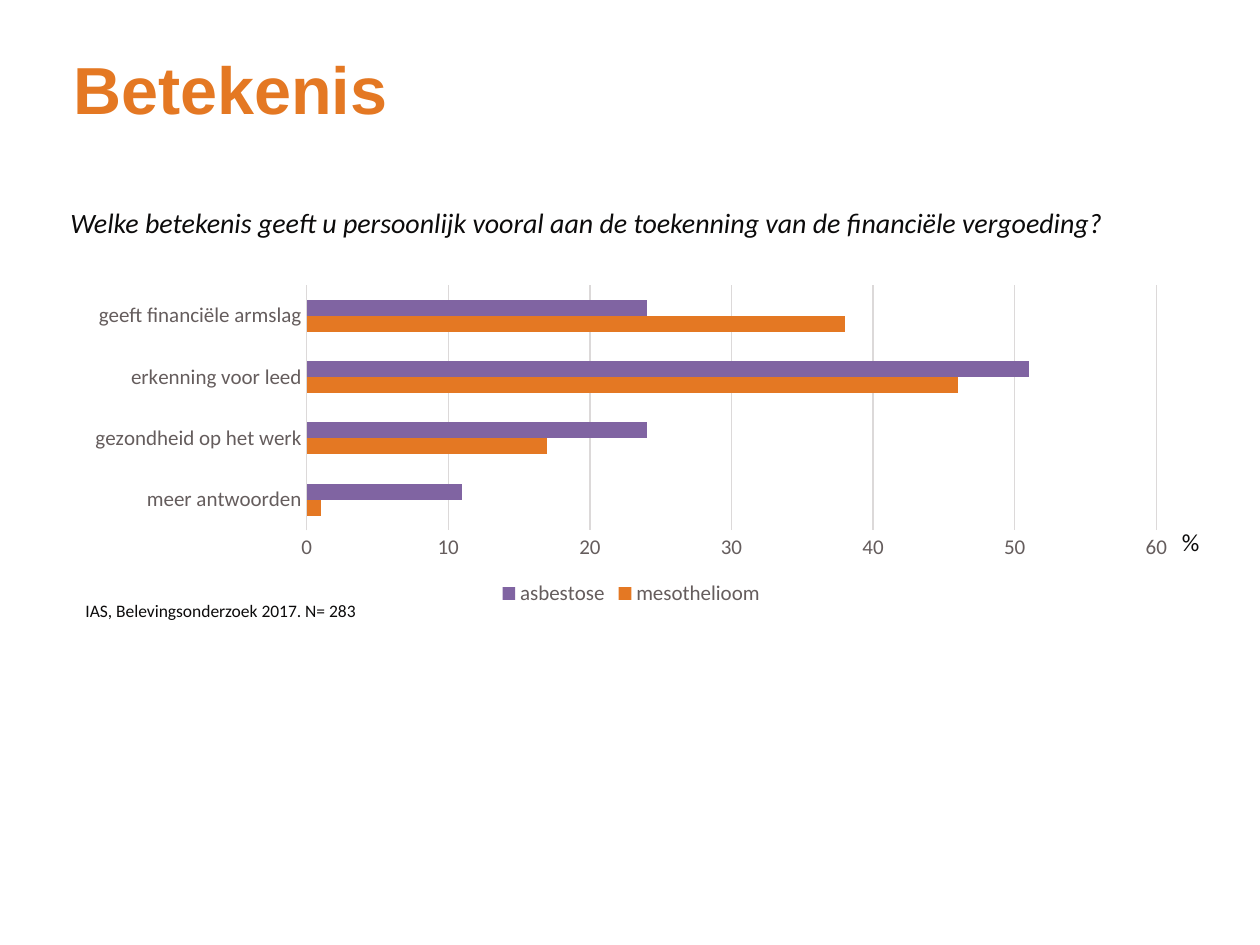
from dataclasses import dataclass

from pptx import Presentation
from pptx.chart.data import CategoryChartData as ChartData
from pptx.dml.color import RGBColor
from pptx.enum.chart import XL_CHART_TYPE as Kind, XL_LEGEND_POSITION as Spot, XL_TICK_MARK as Tick
from pptx.slide import Slide
from pptx.util import Inches, Pt

ORANGE = RGBColor(0xE4, 0x78, 0x23)
PURPLE = RGBColor(0x80, 0x64, 0xA2)
INK = RGBColor(0x0C, 0x0B, 0x0B)
GREY = RGBColor(0x65, 0x5D, 0x5D)
RULE = RGBColor(0xDC, 0xD9, 0xD9)
WIDE, HIGH = 10, 7.5
LEFT, SPAN = 0.58, 8.86


@dataclass(frozen=True)
class Box:
    left: float
    top: float
    width: float
    height: float

    def place(self) -> tuple:
        return tuple(Inches(n) for n in (self.left, self.top, self.width, self.height))


@dataclass(frozen=True)
class Group:
    name: str
    shares: tuple
    color: RGBColor


ANSWERS = ("meer antwoorden", "gezondheid op het werk", "erkenning voor leed", "geeft financiële armslag")
GROUPS = (
    Group("mesothelioom", (1, 17, 46, 38), ORANGE),
    Group("asbestose", (11, 24, 51, 24), PURPLE),
)


def style(font, size: float, color: RGBColor, face: str = "Calibri") -> None:
    font.name = face
    font.size = Pt(size)
    font.color.rgb = color


def write(slide: Slide, text: str, box: Box, *, size: float, face: str = "Calibri",
          color: RGBColor = INK, bold: bool = False, italic: bool = False,
          wrap: bool = False, side: float = 0.1, edge: float = 0.05) -> None:
    frame = slide.shapes.add_textbox(*box.place()).text_frame
    frame.word_wrap = wrap
    frame.margin_left = frame.margin_right = Inches(side)
    frame.margin_top = frame.margin_bottom = Inches(edge)
    run = frame.paragraphs[0].add_run()
    run.text = text
    style(run.font, size, color, face)
    run.font.bold = bold
    run.font.italic = italic


def rule(line) -> None:
    line.color.rgb = RULE
    line.width = Pt(0.75)


def plot(slide: Slide, box: Box) -> None:
    data = ChartData(number_format="General")
    data.categories = ANSWERS
    for group in GROUPS:
        data.add_series(group.name, group.shares)
    chart = slide.shapes.add_chart(Kind.BAR_CLUSTERED, *box.place(), data).chart
    style(chart.font, 10, INK)
    chart.has_title = False

    chart.has_legend = True
    chart.legend.position = Spot.BOTTOM
    chart.legend.include_in_layout = False
    style(chart.legend.font, 12, GREY)

    for axis in (chart.category_axis, chart.value_axis):
        axis.major_tick_mark = axis.minor_tick_mark = Tick.NONE
        style(axis.tick_labels.font, 12, GREY)
    rule(chart.category_axis.format.line)
    values = chart.value_axis
    values.minimum_scale, values.maximum_scale, values.major_unit = 0, 60, 10
    values.format.line.fill.background()
    values.has_major_gridlines = True
    rule(values.major_gridlines.format.line)

    bars = chart.plots[0]
    bars.gap_width = 182
    bars.overlap = 0
    bars.vary_by_categories = False
    for series, group in zip(bars.series, GROUPS):
        series.format.fill.solid()
        series.format.fill.fore_color.rgb = group.color


def main() -> None:
    deck = Presentation()
    deck.slide_width, deck.slide_height = Inches(WIDE), Inches(HIGH)
    slide = deck.slides.add_slide(deck.slide_layouts[6])
    write(slide, "Betekenis", Box(LEFT, 0.38, SPAN, 0.64), size=38, face="Arial",
          color=ORANGE, bold=True, wrap=True, side=0, edge=0)
    plot(slide, Box(LEFT, 2.21, SPAN, 2.64))
    write(slide, "Welke betekenis geeft u persoonlijk vooral aan de toekenning van de financiële vergoeding?",
          Box(0.46, 1.58, 8.54, 0.37), size=16, italic=True)
    write(slide, "%", Box(9.38, 4.13, 0.11, 0.34), size=14, wrap=True, side=0)
    write(slide, "IAS, Belevingsonderzoek 2017. N= 283", Box(LEFT, 4.71, 2.46, 0.27), size=10)
    deck.save("out.pptx")


if __name__ == "__main__":
    main()
